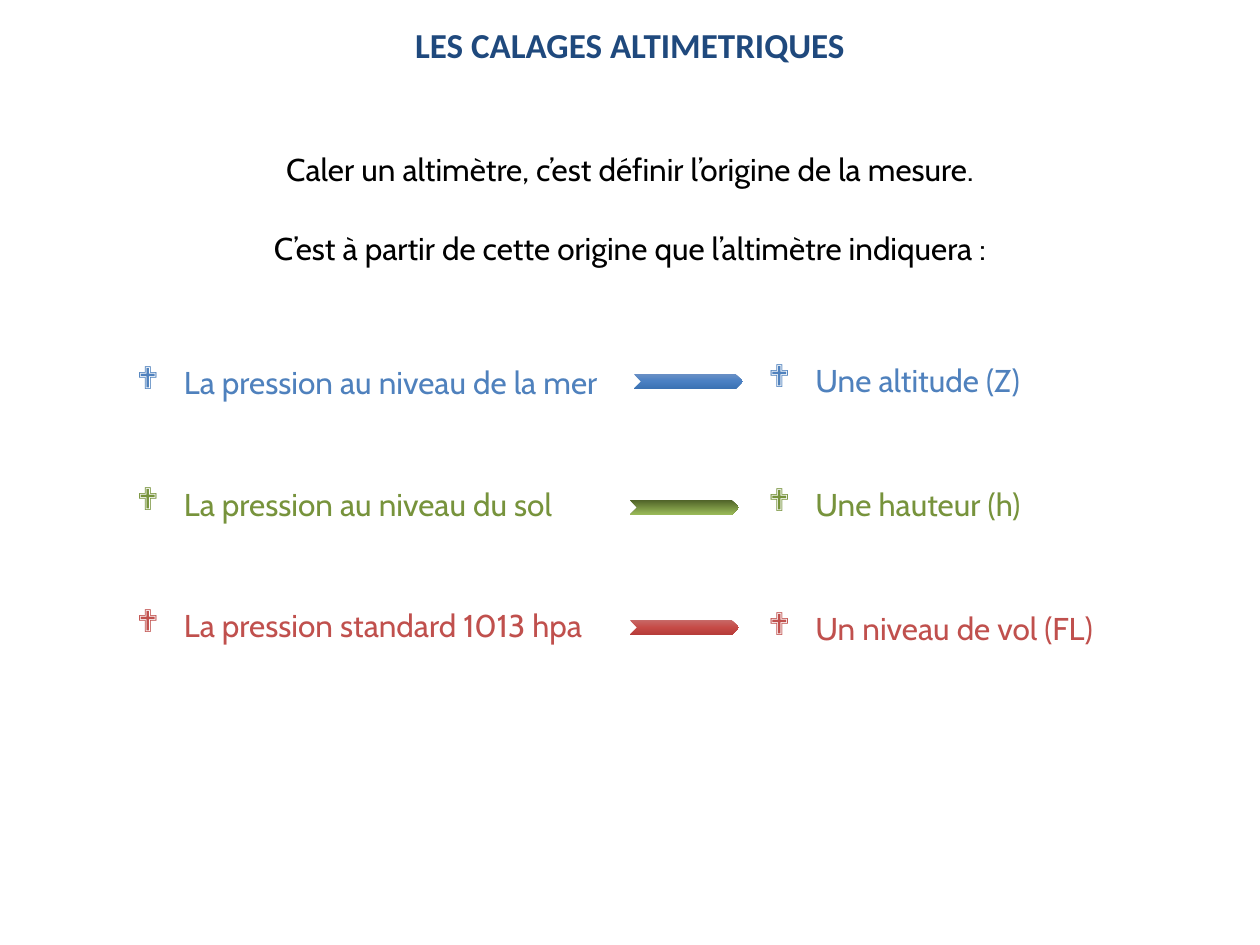
import copy

import pptx
import pptx.dml.color
import pptx.enum.shapes
import pptx.enum.text
import pptx.oxml.ns
import pptx.util
from lxml import etree

Cm, Pt = pptx.util.Cm, pptx.util.Pt
qn = pptx.oxml.ns.qn
RGB = pptx.dml.color.RGBColor.from_string
ALIGN = pptx.enum.text.PP_ALIGN
AUTO = pptx.enum.text.MSO_AUTO_SIZE

COLORS = {"title": "1F497D", "text": "000000", "sea": "4F81BD",
          "ground": "77933C", "standard": "C0504D"}
GRADIENTS = {"sea": ["688FC5", "4A80C3", "3B72B3"],
             "ground": ["4F6228", "9BBB59"],
             "standard": ["C76967", "C64B47", "B63C39"]}

TITLE = "LES CALAGES ALTIMETRIQUES"
INTRO = [("Caler un altimètre, c’est définir l’origine de la mesure.", 2.9),
         ("C’est à partir de cette origine que l’altimètre indiquera :", 4.5)]
SETTINGS = [
    ("sea", "La pression au niveau de la mer", "Une altitude (Z)", (12.78, 7.54)),
    ("ground", "La pression au niveau du sol", "Une hauteur (h)", (12.7, 10.08)),
    ("standard", "La pression standard 1013 hpa", "Un niveau de vol (FL)", (12.7, 12.5)),
]

WIDTH = 25.4
RESULT_TOP, RESULT_PITCH = 7.16, 2.5
BODY = {"name": "Cabin", "size": Pt(18)}
HEADING = {"name": "Calibri", "size": Pt(20), "bold": True}


def apply(obj, values):
    for key, value in values.items():
        setattr(obj, key, value)


def write(p, text, color, font=BODY, **layout):
    apply(p, layout)
    r = p.add_run()
    r.text = text
    apply(r.font, font)
    r.font.color.rgb = RGB(COLORS[color])


def add_box(slide, left, top, width, height):
    tf = slide.shapes.add_textbox(Cm(left), Cm(top), Cm(width), Cm(height)).text_frame
    apply(tf, {"word_wrap": True, "auto_size": AUTO.SHAPE_TO_FIT_TEXT})
    return tf


def add_bullets(slide, left, top, width, height, items):
    tf = add_box(slide, left, top, width, height)
    for i, (color, text) in enumerate(items):
        p = tf.add_paragraph() if i else tf.paragraphs[0]
        pPr = p._p.get_or_add_pPr()
        pPr.set("marL", str(Cm(0.95)))
        pPr.set("indent", str(-Cm(0.95)))
        etree.SubElement(pPr, qn("a:buFont"), typeface="Wingdings")
        etree.SubElement(pPr, qn("a:buChar"), char="❖")
        write(p, text, color, space_before=Pt(24 if i else 0), space_after=Pt(24))


def add_arrow(slide, left, top, colors):
    s = slide.shapes.add_shape(pptx.enum.shapes.MSO_SHAPE.CHEVRON,
                               Cm(left), Cm(top), Cm(2.2), Cm(0.3))
    s.shadow.inherit = False
    s.line.fill.background()
    s.fill.gradient()
    s.fill.gradient_angle = 270
    stops = s._element.spPr.find(qn("a:gradFill")).find(qn("a:gsLst"))
    while len(stops) < len(colors):
        stops.append(copy.deepcopy(stops[-1]))
    for i, (stop, color) in enumerate(zip(s.fill.gradient_stops, colors)):
        stop.position = i / (len(colors) - 1)
        stop.color.rgb = RGB(color)


def main():
    prs = pptx.Presentation()
    apply(prs, {"slide_width": Cm(WIDTH), "slide_height": Cm(19.05)})
    slide = prs.slides.add_slide(prs.slide_layouts[5])

    title = slide.shapes.title
    apply(title, {"left": Cm(0), "top": Cm(0.08), "width": Cm(WIDTH), "height": Cm(1.37)})
    apply(title.text_frame, {"word_wrap": True, "auto_size": AUTO.NONE,
                             "vertical_anchor": pptx.enum.text.MSO_ANCHOR.MIDDLE})
    write(title.text_frame.paragraphs[0], TITLE, "title", HEADING,
          alignment=ALIGN.CENTER, line_spacing=1.3, space_before=Pt(0))

    for text, top in INTRO:
        tf = add_box(slide, 0, top, WIDTH, 1.02)
        write(tf.paragraphs[0], text, "text", alignment=ALIGN.CENTER)

    add_bullets(slide, 2.51, 7.19, 9.86, 6, [row[:2] for row in SETTINGS])
    for i, (key, _, result, arrow) in enumerate(SETTINGS):
        add_bullets(slide, 15.24, RESULT_TOP + i * RESULT_PITCH, 8.81, 1.02, [(key, result)])
        add_arrow(slide, *arrow, GRADIENTS[key])

    prs.save("out.pptx")


if __name__ == "__main__":
    main()
